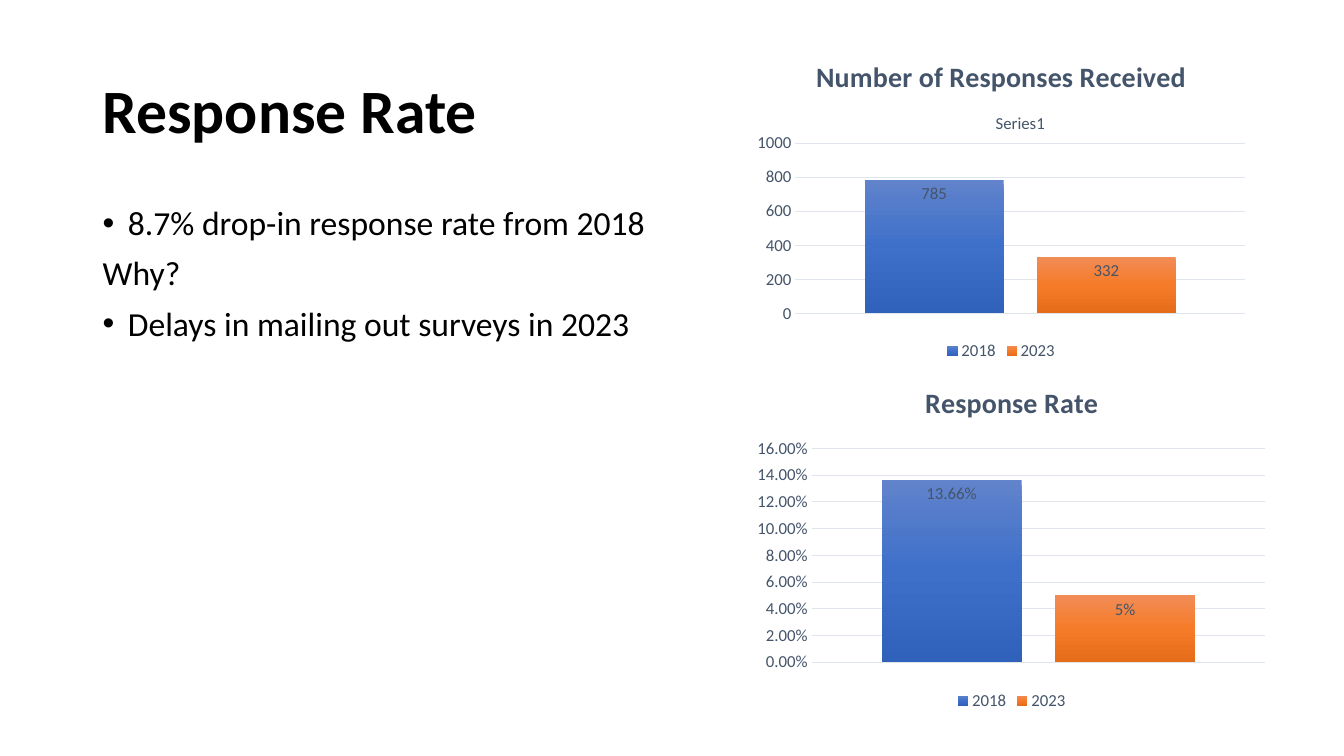
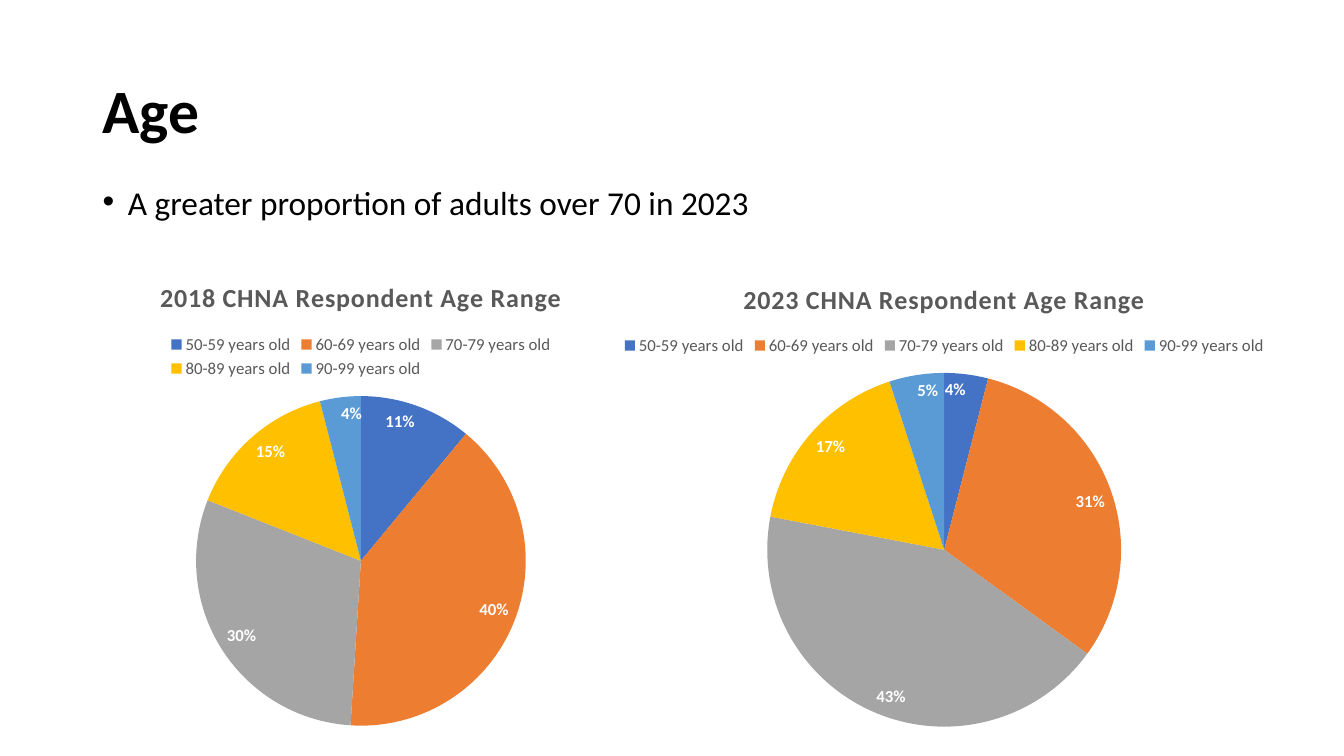
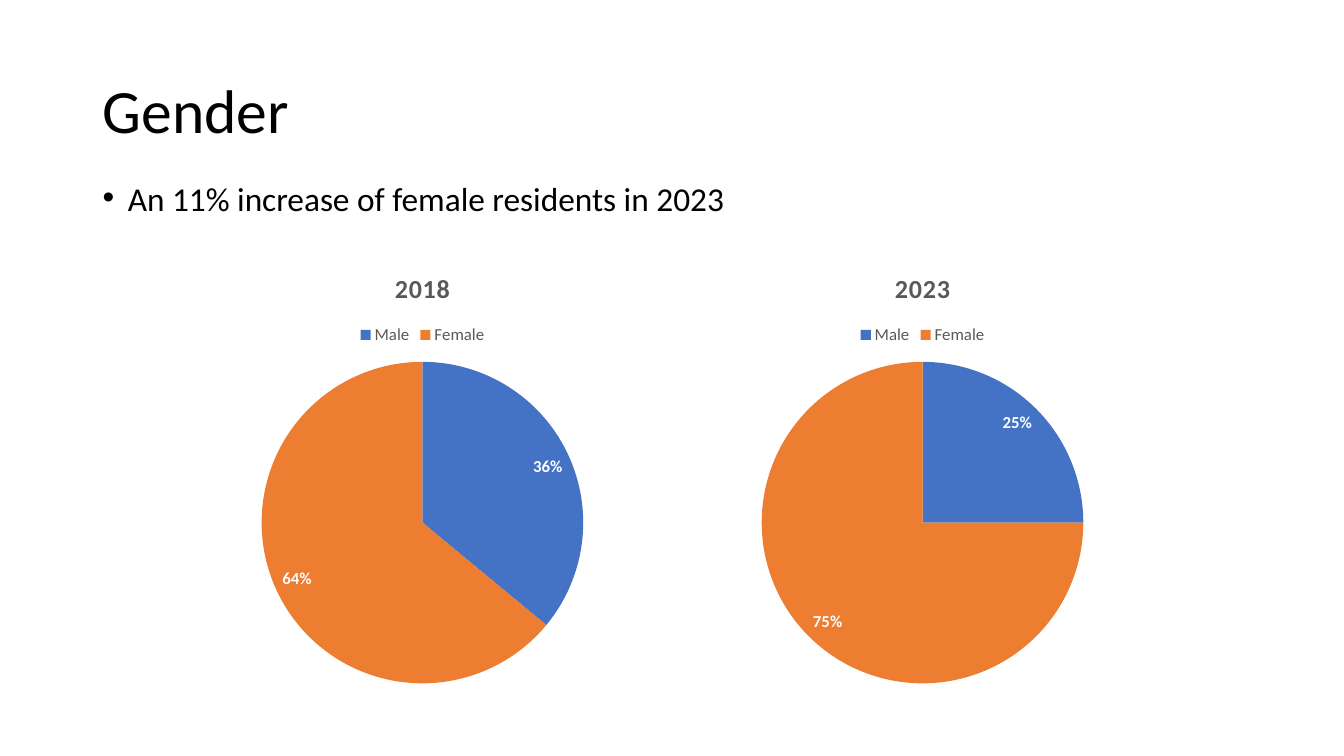
"""Build three survey result slides with native text and charts."""
from copy import deepcopy
from dataclasses import dataclass

from lxml import etree
from pptx import Presentation
from pptx import util as u
from pptx.chart.data import CategoryChartData
from pptx.dml.color import RGBColor
from pptx.enum import chart as ce
from pptx.enum import text
from pptx.oxml import ns


@dataclass(frozen=True)
class Theme:
    font: str = "Calibri"
    ink: str = "000000"
    slate: str = "44546A"
    grey: str = "595959"
    white: str = "FFFFFF"
    grid: str = "E0E5EB"
    slices: tuple = ("4472C4", "ED7D31", "A5A5A5", "FFC000", "5B9BD5")
    columns: tuple = (("6183CB", "3E70CA", "3062BB"), ("F18C57", "F67B28", "E56C19"))
    title: float = 44
    body: float = 24
    note: float = 23.8
    column_title: float = 20
    pie_title: float = 18.6
    label: float = 12


T = Theme()


def apply(obj, **values):
    for name, value in values.items():
        setattr(obj, name, value)


def style(font, size, color, bold=False):
    apply(font, name=T.font, size=u.Pt(size), bold=bold)
    font.color.rgb = RGBColor.from_string(color)


class Deck:
    """Holds the presentation and the slide being filled."""

    def __init__(self):
        self.prs = Presentation()
        apply(self.prs, slide_width=u.Inches(13.33), slide_height=u.Inches(7.5))
        self.s = None

    def slide(self, title, bold=True, width=11.5):
        self.s = self.prs.slides.add_slide(self.prs.slide_layouts[6])
        tf = self.box((0.92, 0.4, width, 1.45))
        tf.vertical_anchor = text.MSO_ANCHOR.MIDDLE
        p = tf.paragraphs[0]
        apply(p, text=title, line_spacing=0.9)
        style(p.runs[0].font, T.title, T.ink, bold)

    def box(self, at):
        tf = self.s.shapes.add_textbox(*map(u.Inches, at)).text_frame
        tf.word_wrap = True
        return tf

    def body(self, at, lines, size, spacing):
        tf = self.box(at)
        for i, (line, bullet) in enumerate(lines):
            p = tf.add_paragraph() if i else tf.paragraphs[0]
            apply(p, text=line, line_spacing=spacing, space_before=u.Pt(10))
            style(p.runs[0].font, size, T.ink)
            if bullet:
                pPr = p._p.get_or_add_pPr()
                pPr.set("marL", str(u.Inches(0.25)))
                pPr.set("indent", str(u.Inches(-0.25)))
                etree.SubElement(pPr, ns.qn("a:buFont")).set("typeface", "Arial")
                etree.SubElement(pPr, ns.qn("a:buChar")).set("char", "•")

    def note(self, top, line):
        self.body((0.92, top, 9.14, 0.7), [(line, True)], T.note, 0.7)

    def chart(self, kind, at, plot_at, title, cats, series, title_size, color, legend_at):
        data = CategoryChartData()
        data.categories = cats
        for name, values in series:
            data.add_series(name, values)
        chart = self.s.shapes.add_chart(kind, *map(u.Inches, at), data).chart
        chart.has_title = True
        p = chart.chart_title.text_frame.paragraphs[0]
        p.text = title
        style(p.runs[0].font, title_size, color, True)
        chart.has_legend = True
        apply(chart.legend, position=legend_at, include_in_layout=False)
        style(chart.legend.font, T.label, color)
        self.place_plot(chart, at, plot_at)
        return chart

    def place_plot(self, chart, at, plot_at):
        area = chart._chartSpace.xpath("c:chart/c:plotArea")[0]
        for old in area.findall(ns.qn("c:layout")):
            area.remove(old)
        layout = etree.Element(ns.qn("c:layout"))
        manual = etree.SubElement(layout, ns.qn("c:manualLayout"))
        left, top, width, height = at
        x, y, w, h = plot_at
        values = {
            "layoutTarget": "inner", "xMode": "edge", "yMode": "edge",
            "x": (x - left) / width, "y": (y - top) / height,
            "w": w / width, "h": h / height,
        }
        for tag, value in values.items():
            etree.SubElement(manual, ns.qn("c:" + tag)).set("val", str(value))
        area.insert(0, layout)

    def labels(self, series, color, number_format, bold=False, percent=False):
        labels = series.data_labels
        apply(labels, show_value=not percent, show_percentage=percent,
              number_format=number_format, number_format_is_linked=False,
              position=ce.XL_LABEL_POSITION.INSIDE_END)
        style(labels.font, T.label, color, bold)

    def columns(self, at, plot_at, title, cat, values, top, step, axis_format, label_formats):
        chart = self.chart(ce.XL_CHART_TYPE.COLUMN_CLUSTERED, at, plot_at, title, [cat],
                           [(year, [v]) for year, v in zip(("2018", "2023"), values)],
                           T.column_title, T.slate, ce.XL_LEGEND_POSITION.BOTTOM)
        plot = chart.plots[0]
        apply(plot, gap_width=100, overlap=-24, vary_by_categories=False)
        for series, colors, fmt in zip(plot.series, T.columns, label_formats):
            self.gradient(series, colors)
            self.labels(series, T.slate, fmt)
        axis = chart.value_axis
        apply(axis, minimum_scale=0, maximum_scale=top, major_unit=step)
        apply(axis.tick_labels, number_format=axis_format, number_format_is_linked=False)
        axis.format.line.fill.background()
        lines = [axis.major_gridlines.format.line]
        if cat:
            chart.category_axis.tick_label_position = ce.XL_TICK_LABEL_POSITION.HIGH
            lines.append(chart.category_axis.format.line)
        else:
            chart.category_axis.visible = False
        for line in lines:
            line.width = u.Pt(0.75)
            line.color.rgb = RGBColor.from_string(T.grid)
        for ax in (axis, chart.category_axis):
            ax.major_tick_mark = ce.XL_TICK_MARK.NONE
            style(ax.tick_labels.font, T.label, T.slate)

    def gradient(self, series, colors):
        fill = series.format.fill
        fill.gradient()
        fill.gradient_angle = 270
        stops = series._element.xpath(".//a:gsLst")[0]
        stops.append(deepcopy(stops[0]))
        for stop, color, position in zip(fill.gradient_stops, colors, (0, 0.5, 1)):
            stop.position = position
            stop.color.rgb = RGBColor.from_string(color)

    def pie(self, at, plot_top, diameter, title, cats, values):
        plot_at = (at[0] + (at[2] - diameter) / 2, plot_top, diameter, diameter)
        chart = self.chart(ce.XL_CHART_TYPE.PIE, at, plot_at, title, cats, [(title, values)],
                           T.pie_title, T.grey, ce.XL_LEGEND_POSITION.TOP)
        r = chart.chart_title.text_frame.paragraphs[0].runs[0]
        r.font._element.set("spc", "50")
        plot = chart.plots[0]
        plot.vary_by_categories = True
        series = plot.series[0]
        for i, color in enumerate(T.slices[:len(cats)]):
            fill = series.points[i].format.fill
            fill.solid()
            fill.fore_color.rgb = RGBColor.from_string(color)
        self.labels(series, T.white, "0%", bold=True, percent=True)


def main():
    deck = Deck()

    deck.slide("Response Rate", width=6.49)
    deck.body((0.92, 2, 5.75, 4.76), [
        ("8.7% drop-in response rate from 2018", True),
        ("Why?", False),
        ("Delays in mailing out surveys in 2023", True),
    ], T.body, 0.9)
    deck.columns((7.41, 0.4, 5.04, 3.22), (7.89, 1.42, 4.46, 1.69),
                 "Number of Responses Received", "Series1", (785, 332),
                 1000, 200, "General", ("General", "General"))
    deck.columns((7.41, 3.62, 5.25, 3.47), (8.05, 4.45, 4.5, 2.12),
                 "Response Rate", "", (0.1366, 0.05),
                 0.16, 0.02, "0.00%", ("0.00%", "0%"))

    deck.slide("Age")
    deck.note(1.87, "A greater proportion of adults over 70 in 2023")
    ages = [f"{n}-{n + 9} years old" for n in range(50, 100, 10)]
    for year, at, top, diameter, values in (
        (2018, (0.31, 2.58, 6.54, 4.76), 3.93, 3.27, (11, 40, 30, 15, 4)),
        (2023, (5.72, 2.59, 7.29, 4.76), 3.7, 3.51, (4, 31, 43, 17, 5)),
    ):
        deck.pie(at, top, diameter, f"{year} CHNA Respondent Age Range", ages, values)

    deck.slide("Gender", bold=False)
    deck.note(1.83, "An 11% increase of female residents in 2023")
    for year, left, values in (("2018", 0.92, (36, 64)), ("2023", 5.88, (25, 75))):
        deck.pie((left, 2.49, 6.54, 4.44), 3.59, 3.19, year, ("Male", "Female"), values)

    deck.prs.save("out.pptx")


if __name__ == "__main__":
    main()
